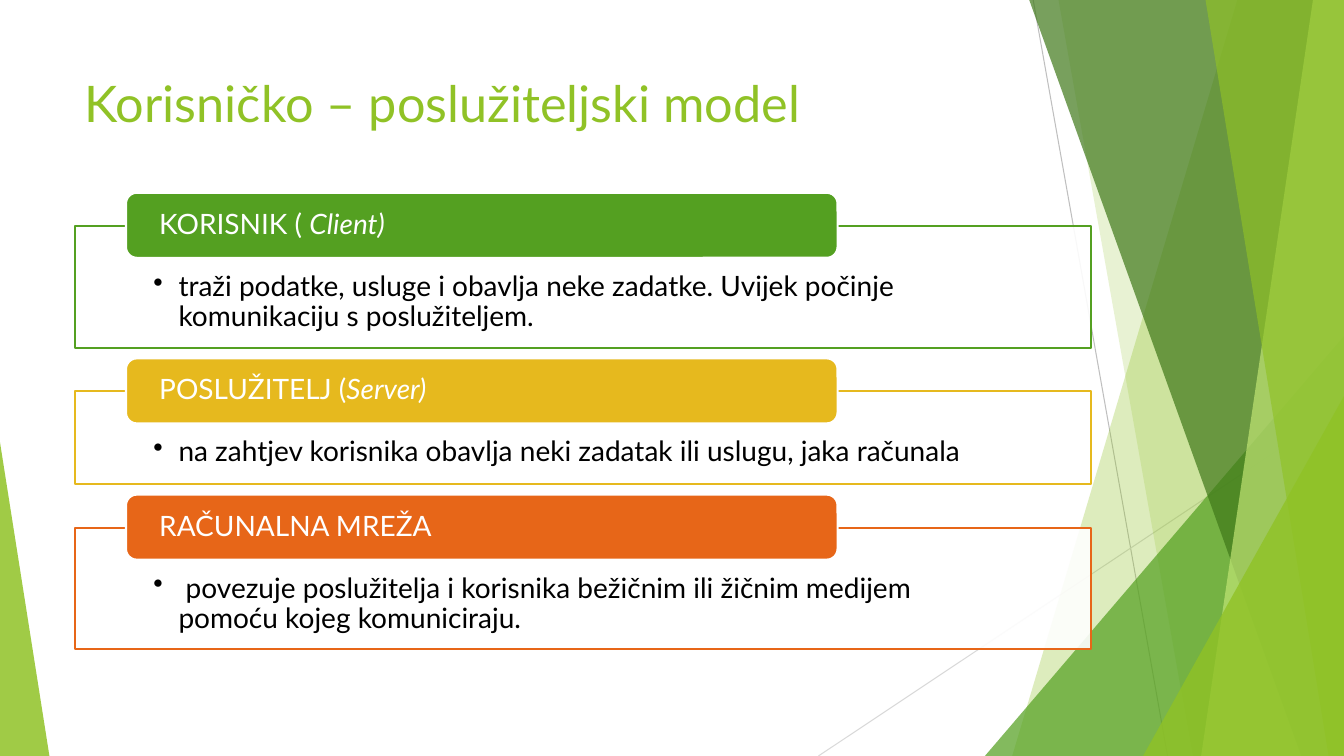
from lxml import etree
from pptx import Presentation
from pptx.dml.color import RGBColor
from pptx.enum.shapes import MSO_CONNECTOR, MSO_SHAPE
from pptx.enum.text import MSO_ANCHOR, PP_ALIGN
from pptx.oxml.ns import qn
from pptx.util import Pt

FONT = "Lato"
LIME, GREEN, GOLD, ORANGE = "90C226", "54A021", "E6B91E", "E76618"
WIDTH, HEIGHT = 960, 540

# Outline points, fill, opacity in percent
SHARDS_BEHIND = [
    ([(884, -0.6), (WIDTH, -0.6), (WIDTH, HEIGHT), (723, HEIGHT)], LIME, 30),
    ([(756, -0.6), (WIDTH, -0.6), (WIDTH, HEIGHT), (852, HEIGHT)], LIME, 20),
]
SHARDS_FRONT = [
    ([(735, -0.6), (WIDTH, -0.6), (WIDTH, HEIGHT), (929.5, HEIGHT)], "3F7819", 70),
    ([(938, -0.6), (WIDTH, -0.6), (WIDTH, HEIGHT), (858, HEIGHT)], "C0E474", 70),
    ([(861, -0.6), (WIDTH, -0.6), (WIDTH, HEIGHT), (949, HEIGHT)], LIME, 65),
]

# Heading, its italic ending, description, colour, frame height
ROLES = [
    ("KORISNIK ( ", "Client)",
     "traži podatke, usluge i obavlja neke zadatke. "
     "Uvijek počinje komunikaciju s poslužiteljem.", GREEN, 87),
    ("POSLUŽITELJ (", "Server)",
     "na zahtjev korisnika obavlja neki zadatak ili uslugu, jaka računala", GOLD, 66),
    ("RAČUNALNA MREŽA", "",
     " povezuje poslužitelja i korisnika bežičnim ili žičnim medijem "
     "pomoću kojeg komuniciraju.", ORANGE, 87),
]
FIRST_TOP, ROLE_GAP = 161.3, 31.3


def colour(hex_code):
    return RGBColor.from_string(hex_code)


def paint(shape, fill, opacity=100, line=None):
    shape.shadow.inherit = False
    shape.fill.solid()
    shape.fill.fore_color.rgb = colour(fill)
    if opacity < 100:
        tint = shape.fill._xPr.find(qn("a:solidFill"))[0]
        etree.SubElement(tint, qn("a:alpha"), val=str(opacity * 1000))
    if line:
        shape.line.color.rgb = colour(line)
        shape.line.width = Pt(1.5)
    else:
        shape.line.fill.background()


def add_block(slide, kind, left, top, width, height):
    return slide.shapes.add_shape(kind, Pt(left), Pt(top), Pt(width), Pt(height))


def add_hairline(slide, start, end, tone):
    hairline = slide.shapes.add_connector(
        MSO_CONNECTOR.STRAIGHT, *(Pt(value) for value in start + end))
    hairline.line.color.rgb = colour(tone)
    hairline.line.width = Pt(0.75)
    etree.SubElement(hairline._element.spPr, qn("a:effectLst"))


def add_shard(slide, corners, fill, opacity):
    first, *others = [(Pt(x), Pt(y)) for x, y in corners]
    outline = slide.shapes.build_freeform(*first)
    outline.add_line_segments(others, close=True)
    paint(outline.convert_to_shape(), fill, opacity)


def add_corner(slide, left, top, width, apex, fill, opacity):
    corner = add_block(slide, MSO_SHAPE.ISOSCELES_TRIANGLE,
                       left, top, width, HEIGHT - top)
    corner.adjustments[0] = apex
    paint(corner, fill, opacity)


def write(shape, size, tone, runs, insets, anchor=MSO_ANCHOR.TOP):
    frame = shape.text_frame
    frame.word_wrap = True
    frame.vertical_anchor = anchor
    (frame.margin_left, frame.margin_top,
     frame.margin_right, frame.margin_bottom) = (Pt(inset) for inset in insets)
    paragraph = frame.paragraphs[0]
    paragraph.alignment = PP_ALIGN.LEFT
    paragraph.font.name = FONT
    paragraph.font.size = Pt(size)
    paragraph.font.color.rgb = colour(tone)
    for text, italic in runs:
        run = paragraph.add_run()
        run.text = text
        if italic:
            run.font.italic = True
    return paragraph


def add_bullet(paragraph):
    properties = paragraph._p.get_or_add_pPr()
    properties.set("marL", str(Pt(18)))
    properties.set("indent", str(-Pt(18)))
    bullet = etree.Element(qn("a:buChar"), char="•")
    properties.find(qn("a:defRPr")).addprevious(bullet)


def add_role(slide, top, heading, ending, description, tone, height):
    # Frame with the description
    frame = add_block(slide, MSO_SHAPE.RECTANGLE, 53.3, top, 725.8, height)
    paint(frame, "FFFFFF", 90, tone)
    duty = write(frame, 20, "000000", [(description, False)], (56.2, 33, 56.2, 11.5))
    duty.line_spacing = 0.9
    add_bullet(duty)

    # Heading tab across the frame's upper edge
    tab = add_block(slide, MSO_SHAPE.ROUNDED_RECTANGLE, 90, top - 23.6, 508.3, 46.5)
    paint(tab, tone, line="FFFFFF")
    runs = [(heading, False)] + ([(ending, True)] if ending else [])
    name = write(tab, 20, "FFFFFF", runs, (21.5, 0, 21.5, 0), MSO_ANCHOR.MIDDLE)
    name.line_spacing = 0.9


def add_backdrop(slide):
    add_hairline(slide, (738, 0), (834, HEIGHT), "BFBFBF")
    add_hairline(slide, (WIDTH, 290), (584.6, HEIGHT), "D9D9D9")
    for shard in SHARDS_BEHIND:
        add_shard(slide, *shard)
    add_corner(slide, 703.5, 240, 256.5, 1, GREEN, 72)
    for shard in SHARDS_FRONT:
        add_shard(slide, *shard)
    add_corner(slide, 816.5, 283, 143.5, 1, LIME, 80)
    add_corner(slide, 0, 316, 35.3, 0, LIME, 85)


def main():
    presentation = Presentation()
    presentation.slide_width, presentation.slide_height = Pt(WIDTH), Pt(HEIGHT)
    slide = presentation.slides.add_slide(presentation.slide_layouts[6])

    add_backdrop(slide)

    # Title
    title = slide.shapes.add_textbox(Pt(53.3), Pt(48), Pt(677), Pt(104))
    write(title, 36, LIME, [("Korisničko – poslužiteljski model", False)],
          (7.2, 3.6, 7.2, 3.6))

    # Roles, stacked with equal gaps
    top = FIRST_TOP
    for role in ROLES:
        add_role(slide, top, *role)
        top += role[-1] + ROLE_GAP

    presentation.save("out.pptx")


if __name__ == "__main__":
    main()
